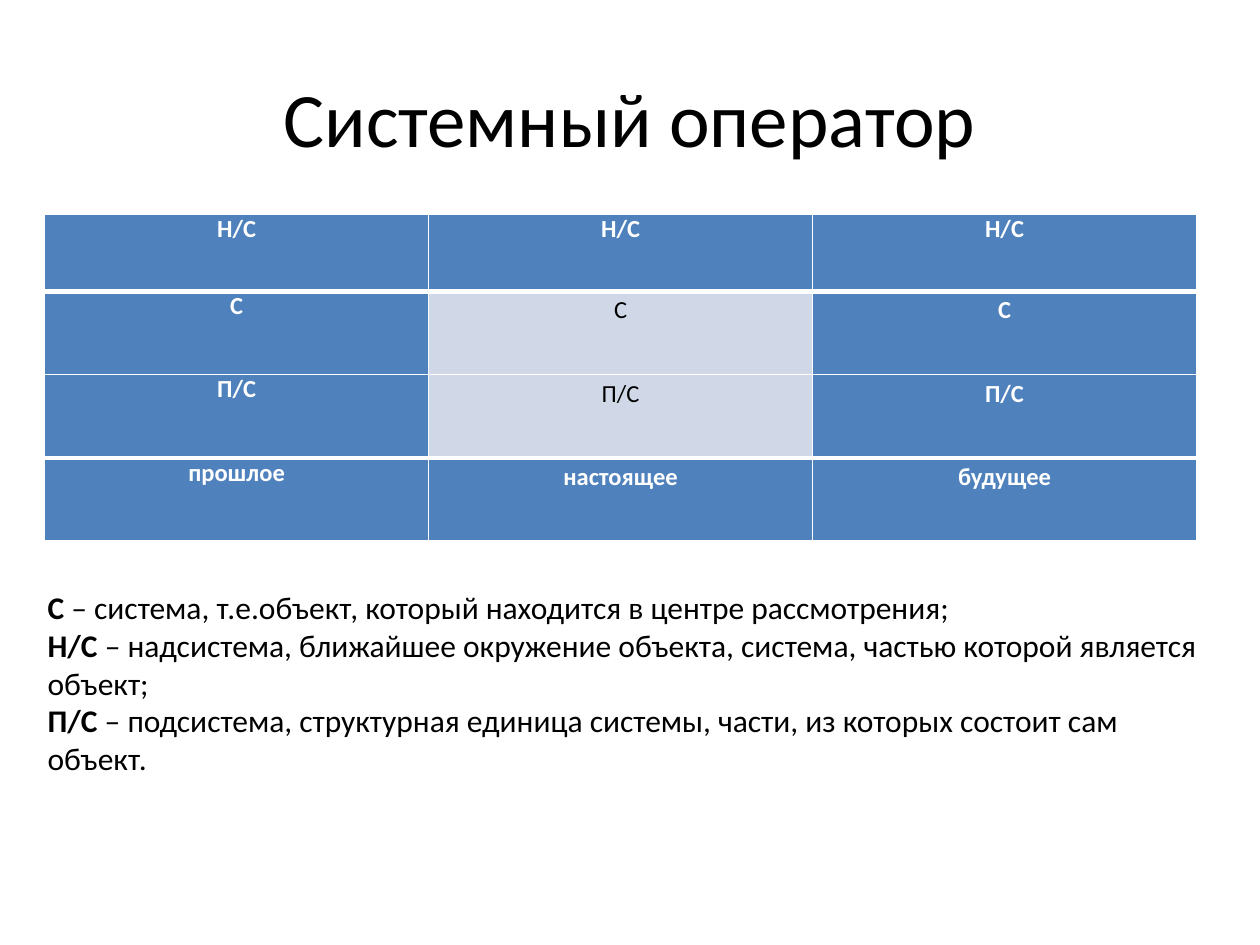
import lxml.etree
import pptx
import pptx.dml.color
import pptx.enum.text
import pptx.oxml.ns
import pptx.util

Cm = pptx.util.Cm
Pt = pptx.util.Pt
RGB = pptx.dml.color.RGBColor.from_string
ALIGN = pptx.enum.text.PP_ALIGN
ANCHOR = pptx.enum.text.MSO_ANCHOR

TITLE = "Системный оператор"
GRID = [
    ("Н/С", "Н/С", "Н/С"),
    ("С", "С", "С"),
    ("П/С", "П/С", "П/С"),
    ("прошлое", "настоящее", "будущее"),
]
PLAIN_CELLS = {(1, 1), (2, 1)}
LEGEND = [
    ("С", " – система, т.е.объект, который находится в центре рассмотрения;"),
    ("Н/С", " – надсистема, ближайшее окружение объекта, система, частью которой является объект;"),
    ("П/С", " – подсистема, структурная единица системы, части, из которых состоит сам объект."),
]
COLORS = {"text": "000000", "light": "FFFFFF", "accent": "4F81BD", "pale": "D0D8E8"}
COL_W = 7.74
ROW_H = [1.55, 1.68, 1.68, 1.68]
RULES = [1, 3, 1, 3, 1]


def write(tf, paragraphs, size, color="text", align=ALIGN.LEFT, spacing=None):
    tf.word_wrap = True
    for i, runs in enumerate(paragraphs):
        p = tf.add_paragraph() if i else tf.paragraphs[0]
        p.alignment = align
        if spacing:
            p.line_spacing = spacing
        for text, bold in runs:
            r = p.add_run()
            r.text = text
            r.font.name = "Calibri"
            r.font.size = Pt(size)
            r.font.bold = bold
            r.font.color.rgb = RGB(COLORS[color])


def add_borders(cell, **widths):
    qn = pptx.oxml.ns.qn
    tc_pr = cell._tc.get_or_add_tcPr()
    for side, width in widths.items():
        ln = lxml.etree.SubElement(tc_pr, qn(f"a:ln{side}"), w=str(Pt(width)))
        fill = lxml.etree.SubElement(ln, qn("a:solidFill"))
        lxml.etree.SubElement(fill, qn("a:srgbClr"), val=COLORS["light"])


def add_grid(s):
    shape = s.shapes.add_table(len(GRID), len(GRID[0]), Cm(0.9), Cm(4.32),
                               Cm(COL_W * len(GRID[0])), Cm(sum(ROW_H)))
    table = shape.table
    for col in table.columns:
        col.width = Cm(COL_W)
    for i, texts in enumerate(GRID):
        table.rows[i].height = Cm(ROW_H[i])
        for j, text in enumerate(texts):
            cell = table.cell(i, j)
            plain = (i, j) in PLAIN_CELLS
            cell.margin_left = cell.margin_right = Cm(0.18)
            cell.margin_top = cell.margin_bottom = 0
            add_borders(cell, L=1, R=1, T=RULES[i], B=RULES[i + 1])
            cell.fill.solid()
            cell.fill.fore_color.rgb = RGB(COLORS["pale" if plain else "accent"])
            write(cell.text_frame, [[(text, not plain)]], 14,
                  color="text" if plain else "light", align=ALIGN.CENTER,
                  spacing=1.15 if i and j else None)


def main():
    prs = pptx.Presentation()
    prs.slide_width, prs.slide_height = Cm(25.4), Cm(19.05)
    s = prs.slides.add_slide(prs.slide_layouts[6])

    title = s.shapes.add_textbox(Cm(1.27), Cm(0.76), Cm(22.86), Cm(3.18))
    title.text_frame.vertical_anchor = ANCHOR.MIDDLE
    write(title.text_frame, [[(TITLE, False)]], 44, align=ALIGN.CENTER)

    add_grid(s)

    legend = s.shapes.add_textbox(Cm(0.71), Cm(11.73), Cm(24.2), Cm(4.11))
    write(legend.text_frame,
          [[(term, True), (meaning, False)] for term, meaning in LEGEND], 18)

    prs.save("out.pptx")


if __name__ == "__main__":
    main()
